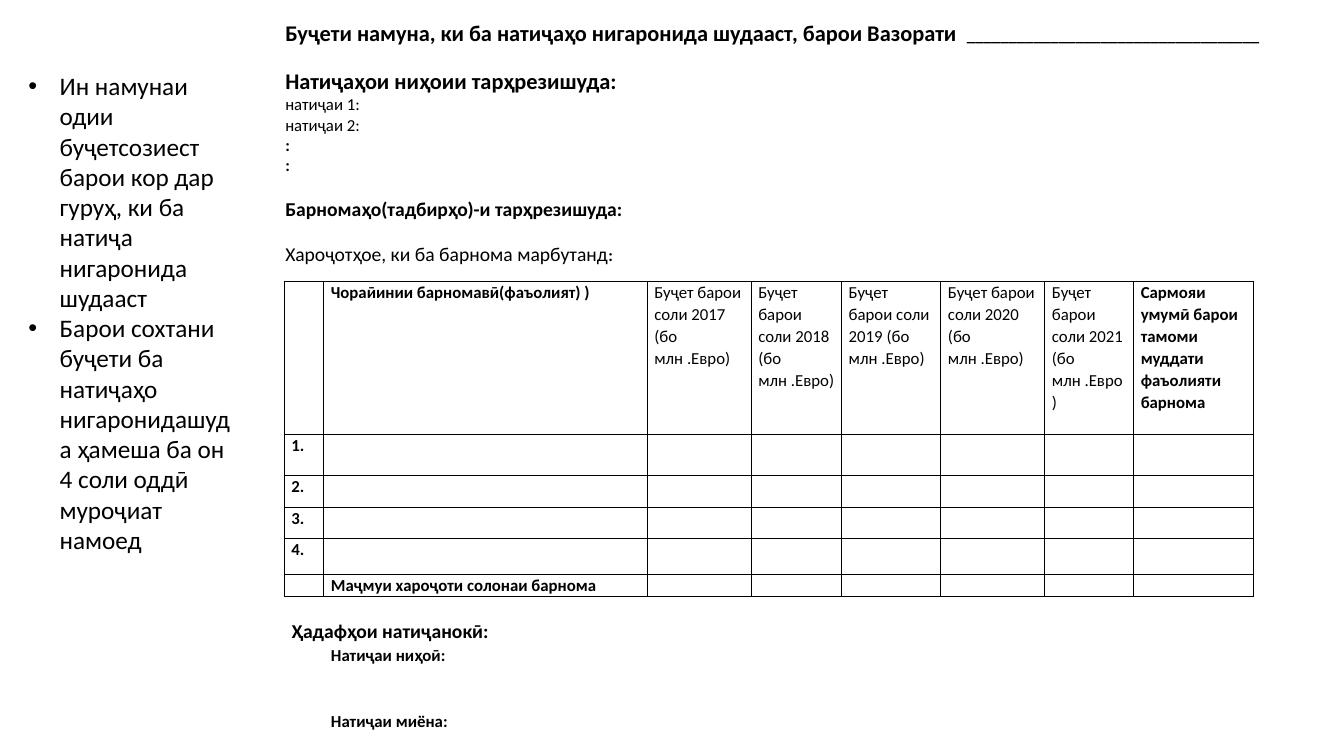
from lxml import etree
from pptx import Presentation
from pptx import util as u
from pptx.dml import color
from pptx.enum import text
from pptx.oxml import ns

FONT = "Calibri"
BLACK = "000000"
INSET = 0.18
COLUMN_WIDTHS = [1.0, 8.15, 2.62, 2.28, 2.5, 2.62, 2.24, 3.02]
GRID_ROWS = [3.86, 1.03, 0.8, 0.79, 0.9, 0.56]
GOAL_ROWS = [1.2, 0.55, 0.55, 0.55, 0.55]
YEARS = range(2017, 2022)

TITLE_RUNS = [
    ("Буҷети намуна, ки ба натиҷаҳо нигаронида шудааст, барои Вазорати  ", 16, True),
    ("_" * 35, 12, True),
]
# Each paragraph: space before in points, then its runs
DETAILS = [
    (0, [("Натиҷаҳои ниҳоии тарҳрезишуда:", 16, True)]),
    (0, [("натиҷаи 1:", 12, False)]),
    (0, [("натиҷаи 2:", 12, False)]),
    (0, [(":", 12, True)]),
    (0, [(":", 12, True)]),
    (16, [("Барномаҳо(тадбирҳо)-и тарҳрезишуда:", 14, True)]),
    (15, [("Хароҷотҳое, ки ба барнома марбутанд", 14, False), (":", 12, True)]),
]
NOTES = [
    "Ин намунаи одии буҷетсозиест барои кор дар гуруҳ, ки ба натиҷа нигаронида шудааст",
    "Барои сохтани буҷети ба натиҷаҳо нигаронидашуда ҳамеша ба он 4 соли оддӣ "
    "муроҷиат намоед",
]


def rgb(value):
    return color.RGBColor.from_string(value)


def style(span, size, bold=False):
    span.font.name = FONT
    span.font.size = u.Pt(size)
    span.font.bold = bold
    span.font.color.rgb = rgb(BLACK)


def add_runs(para, runs):
    for words, size, bold in runs:
        span = para.add_run()
        span.text = words
        style(span, size, bold)


def place(shape, left, top, width, height):
    shape.left, shape.top = u.Cm(left), u.Cm(top)
    shape.width, shape.height = u.Cm(width), u.Cm(height)


def prepare_frame(frame, anchor):
    frame.word_wrap = True
    frame.auto_size = text.MSO_AUTO_SIZE.NONE
    frame.vertical_anchor = anchor


def fill_title(title, left, top, width, height):
    place(title, left, top, width, height)
    frame = title.text_frame
    prepare_frame(frame, text.MSO_ANCHOR.MIDDLE)
    frame.margin_left = u.Cm(1.5)
    para = frame.paragraphs[0]
    para.alignment = text.PP_ALIGN.LEFT
    add_runs(para, TITLE_RUNS)


def fill_notes(body, left, top, width, height):
    place(body, left, top, width, height)
    frame = body.text_frame
    prepare_frame(frame, text.MSO_ANCHOR.TOP)
    frame.text = "\n".join(NOTES)
    for para in frame.paragraphs:
        para.space_before = u.Pt(0)
        properties = para._p.get_or_add_pPr()
        properties.set("marL", str(u.Cm(0.79)))
        properties.set("indent", str(-u.Cm(0.79)))
        style(para.runs[0], 18)


def add_details(page, left, top, width, height):
    box = page.shapes.add_textbox(u.Cm(left), u.Cm(top), u.Cm(width), u.Cm(height))
    frame = box.text_frame
    prepare_frame(frame, text.MSO_ANCHOR.TOP)
    frame.margin_left = u.Cm(1.5)
    for index, (gap, runs) in enumerate(DETAILS):
        para = frame.add_paragraph() if index else frame.paragraphs[0]
        para.space_before = u.Pt(gap)
        add_runs(para, runs)


def set_borders(cell, drawn):
    """Draw a black line on the sides named in drawn and none on the others."""
    properties = cell._tc.get_or_add_tcPr()
    for index, side in enumerate("LRTB"):
        line = etree.Element(ns.qn(f"a:ln{side}"), w=str(u.Pt(1)))
        if side in drawn:
            fill = etree.SubElement(line, ns.qn("a:solidFill"))
            etree.SubElement(fill, ns.qn("a:srgbClr"), val=BLACK)
        else:
            etree.SubElement(line, ns.qn("a:noFill"))
        properties.insert(index, line)


def format_cell(cell, drawn):
    cell.margin_left = cell.margin_right = u.Cm(INSET)
    cell.margin_top = cell.margin_bottom = 0
    cell.fill.background()
    set_borders(cell, drawn)
    cell.text_frame.paragraphs[0]._p.get_or_add_endParaRPr().set("sz", "1200")


def write_cell(cell, words, size=12, bold=True):
    cell.text = words
    para = cell.text_frame.paragraphs[0]
    para.line_spacing = 1.07
    style(para.runs[0], size, bold)


def add_budget_table(page, left, top):
    heights = GRID_ROWS + GOAL_ROWS
    table = page.shapes.add_table(
        len(heights), len(COLUMN_WIDTHS), u.Cm(left), u.Cm(top),
        u.Cm(sum(COLUMN_WIDTHS)), u.Cm(sum(heights))).table
    table.first_row = table.horz_banding = False
    for column, width in zip(table.columns, COLUMN_WIDTHS):
        column.width = u.Cm(width)

    goals = len(GRID_ROWS)
    for index, height in enumerate(heights):
        table.rows[index].height = u.Cm(height)
        drawn = "LRTB" if index < goals else "T" if index == goals else ""
        for cell in table.rows[index].cells:
            format_cell(cell, drawn)

    write_cell(table.cell(0, 1), "Чораӣинии барномавӣ(фаъолият) )")
    for column, year in enumerate(YEARS, 2):
        write_cell(table.cell(0, column), f"Буҷет барои соли {year} (бо млн .Евро)", bold=False)
    write_cell(table.cell(0, 7), "Сармояи умумӣ барои тамоми муддати фаъолияти барнома")
    for number in range(1, 5):
        write_cell(table.cell(number, 0), f"{number}.")
    write_cell(table.cell(goals - 1, 1), "Маҷмуи хароҷоти солонаи барнома")

    heading = table.cell(goals, 0)
    heading.merge(table.cell(goals, 1))
    heading.vertical_anchor = text.MSO_ANCHOR.BOTTOM
    write_cell(heading, "Ҳадафҳои натиҷанокӣ:", 14)
    write_cell(table.cell(goals + 1, 1), "Натиҷаи ниҳоӣ:")
    write_cell(table.cell(goals + 4, 1), "Натиҷаи миёна:")


def main():
    deck = Presentation()
    deck.slide_width, deck.slide_height = u.Cm(33.87), u.Cm(19.05)
    page = deck.slides.add_slide(deck.slide_layouts[1])
    add_budget_table(page, 7.16, 7.09)
    fill_title(page.shapes.title, 5.69, 0.28, 27.58, 1.1)
    add_details(page, 5.69, 1.57, 27.58, 5.21)
    fill_notes(page.placeholders[1], 0.46, 1.65, 5.79, 12.57)
    deck.save("out.pptx")


if __name__ == "__main__":
    main()
